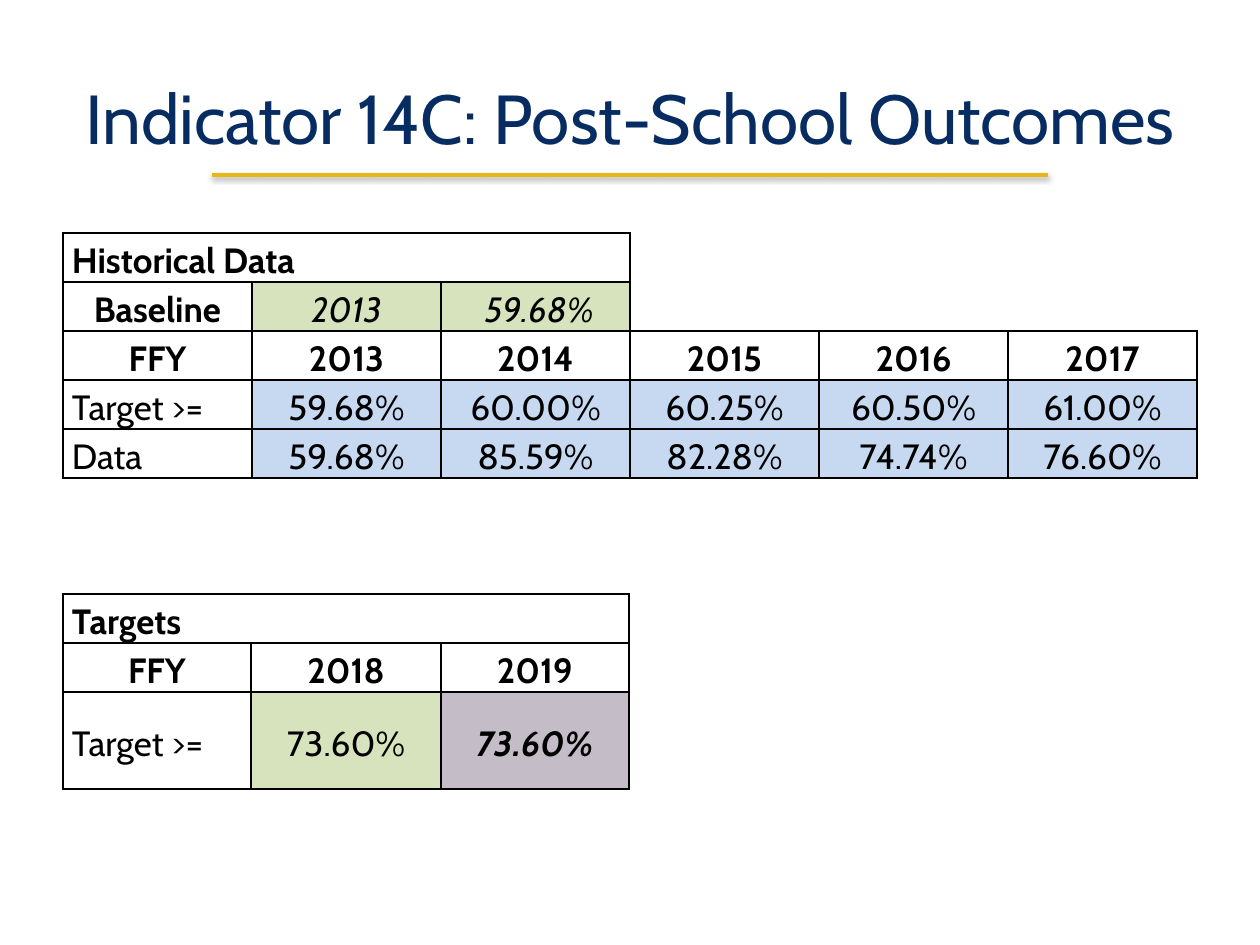
from lxml.etree import SubElement
from pptx import Presentation
from pptx.dml.color import RGBColor
from pptx.enum.shapes import MSO_CONNECTOR
from pptx.enum.text import MSO_ANCHOR, PP_ALIGN
from pptx.oxml import parse_xml
from pptx.oxml.ns import nsdecls, qn
from pptx.util import Emu, Pt

FONT = "Cabin"
COLORS = {
    "navy": "072C62",
    "gold": "E7B617",
    "black": "000000",
    "green": "D6E3BC",
    "blue": "C6D9F1",
    "mauve": "C4BCC6",
}
# Cell styles: bold, italic, centred, fill
STYLES = {
    "heading": (True, False, False, None),
    "column": (True, False, True, None),
    "label": (False, False, False, None),
    "baseline": (False, True, True, "green"),
    "history": (False, False, True, "blue"),
    "target": (False, False, True, "green"),
    "new target": (True, True, True, "mauve"),
}


def px(count):
    return Emu(round(count * 914400 / 126))


def color(name):
    return RGBColor.from_string(COLORS[name])


def add_span(para, text, size, name, bold=False, italic=False):
    span = para.add_run()
    span.text = text
    span.font.name = FONT
    span.font.size = Pt(size)
    span.font.bold = bold
    span.font.italic = italic
    span.font.color.rgb = color(name)


def add_title(page, left, top, width, height, text):
    box = page.shapes.add_textbox(px(left), px(top), px(width), px(height))
    frame = box.text_frame
    frame.word_wrap = True
    frame.vertical_anchor = MSO_ANCHOR.MIDDLE
    para = frame.paragraphs[0]
    para.alignment = PP_ALIGN.CENTER
    add_span(para, text, 39.6, "navy")

    # Gold rule with a soft shadow, centred near the foot of the title
    inset, drop = 149, 137
    rule = page.shapes.add_connector(
        MSO_CONNECTOR.STRAIGHT,
        px(left + inset), px(top + drop), px(left + width - inset), px(top + drop))
    rule.line.color.rgb = color("gold")
    rule.line.width = Pt(2)
    rule._element.spPr.append(parse_xml(
        f'<a:effectLst {nsdecls("a")}>'
        f'<a:outerShdw blurRad="{Pt(3.1)}" dist="{Pt(1.6)}" dir="5400000" rotWithShape="0">'
        f'<a:srgbClr val="{COLORS["black"]}"><a:alpha val="38000"/></a:srgbClr>'
        '</a:outerShdw></a:effectLst>'))


def set_borders(cell, sides):
    properties = cell._tc.get_or_add_tcPr()
    for side in "LRTB":
        line = SubElement(properties, qn(f"a:ln{side}"), w=str(Pt(1)))
        if side in sides:
            fill = SubElement(line, qn("a:solidFill"))
            SubElement(fill, qn("a:srgbClr"), val=COLORS["black"])
        else:
            SubElement(line, qn("a:noFill"))


def fill_cell(cell, text, style):
    bold, italic, centred, fill = STYLES[style]
    if fill:
        cell.fill.solid()
        cell.fill.fore_color.rgb = color(fill)
    cell.vertical_anchor = MSO_ANCHOR.MIDDLE
    para = cell.text_frame.paragraphs[0]
    para.alignment = PP_ALIGN.CENTER if centred else PP_ALIGN.LEFT
    para.line_spacing = 1.15
    para.space_before = para.space_after = Pt(3)
    add_span(para, text, 20, "black", bold, italic)


def add_data_table(page, left, top, widths, heights, rows, blank=None):
    """Rows hold (text, style) cells; the first row is a heading over three columns.
    blank gives the first and last (row, column) of an empty corner."""
    table = page.shapes.add_table(
        len(heights), len(widths), px(left), px(top),
        px(sum(widths)), px(sum(heights))).table
    table.first_row = table.horz_banding = False
    for column, width in zip(table.columns, widths):
        column.width = px(width)
    for row, height in zip(table.rows, heights):
        row.height = px(height)

    for r in range(len(heights)):
        for c in range(len(widths)):
            cell = table.cell(r, c)
            empty = blank and r <= blank[1][0] and c >= blank[0][1]
            set_borders(cell, "LB" if empty else "LRTB")
            cell.fill.background()
            cell.margin_left = cell.margin_right = px(9)
            cell.margin_top = cell.margin_bottom = 0

    table.cell(0, 0).merge(table.cell(0, 2))
    if blank:
        table.cell(*blank[0]).merge(table.cell(*blank[1]))
    for r, row in enumerate(rows):
        for c, (text, style) in enumerate(row):
            fill_cell(table.cell(r, c), text, style)


def styled(label, label_style, values, style):
    return [(label, label_style)] + [(value, style) for value in values]


def main():
    deck = Presentation()
    deck.slide_width, deck.slide_height = px(1260), px(945)
    page = deck.slides.add_slide(deck.slide_layouts[6])

    # Title
    add_title(page, 63, 38, 1134, 158, "Indicator 14C: Post-School Outcomes")

    # Historical data, with an empty corner at top right
    add_data_table(page, 63, 233, [189] * 6, [49] * 5, [
        [("Historical Data", "heading")],
        styled("Baseline", "column", ["2013", " 59.68%"], "baseline"),
        styled("FFY", "column", ["2013", "2014", "2015", "2016", "2017"], "column"),
        styled("Target >=", "label",
               ["59.68%", "60.00%", "60.25%", "60.50%", "61.00%"], "history"),
        styled("Data", "label",
               ["59.68%", "85.59%", "82.28%", "74.74%", "76.60%"], "history"),
    ], blank=((0, 3), (1, 5)))

    # Targets
    add_data_table(page, 63, 594, [188, 190, 188], [49, 49, 97], [
        [("Targets", "heading")],
        styled("FFY", "column", ["2018", "2019"], "column"),
        [("Target >=", "label"), ("73.60%", "target"), ("73.60%", "new target")],
    ])

    deck.save("out.pptx")


if __name__ == "__main__":
    main()
